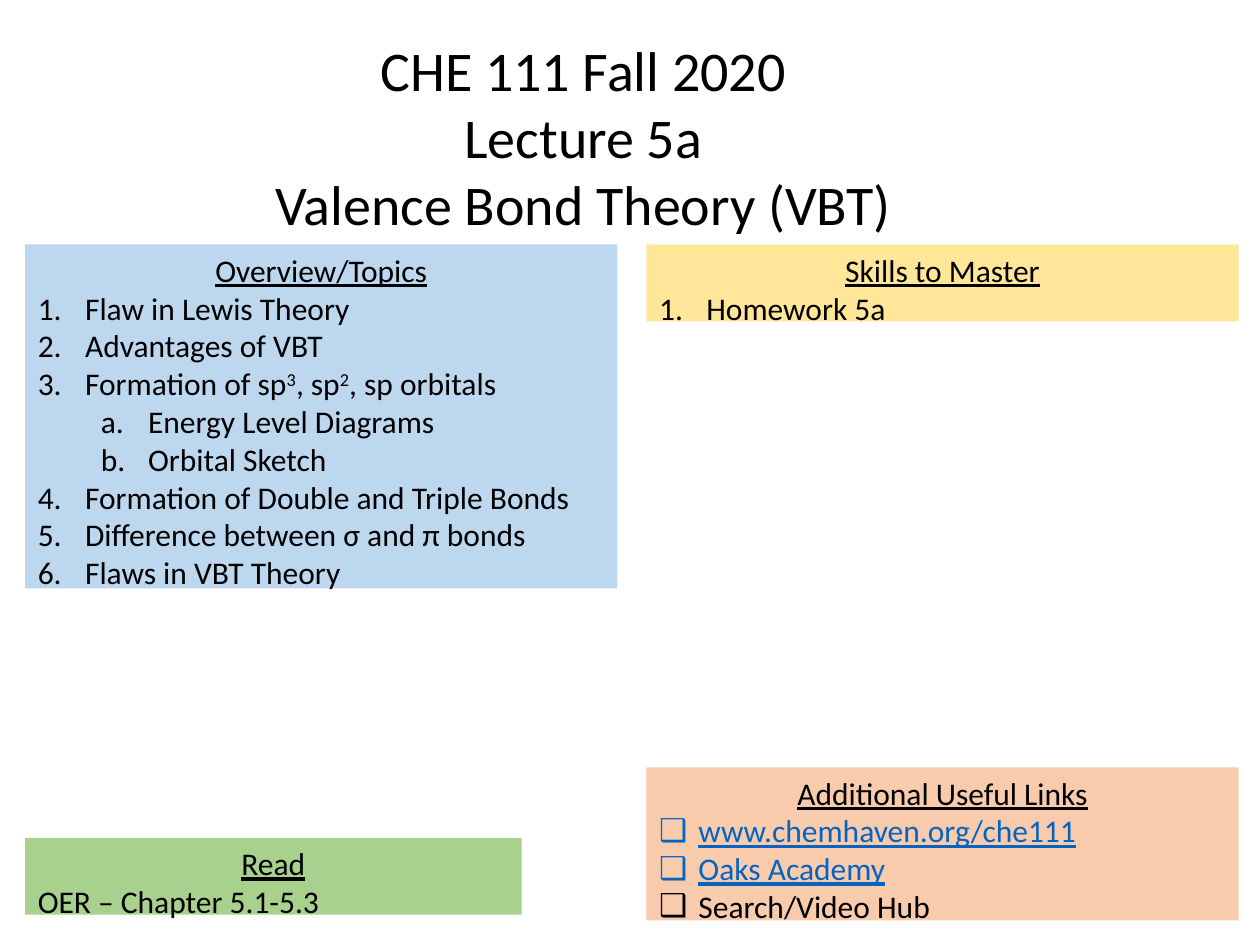
from dataclasses import dataclass

from lxml import etree
from pptx import Presentation
from pptx.dml.color import RGBColor
from pptx.enum import text as t
from pptx.oxml import ns
from pptx.util import Pt

BLACK = RGBColor(0x00, 0x00, 0x00)
LINK_BLUE = RGBColor(0x05, 0x63, 0xC1)
BLUE = RGBColor(0xBD, 0xD7, 0xEE)
YELLOW = RGBColor(0xFF, 0xE6, 0x99)
GREEN = RGBColor(0xA9, 0xD1, 0x8E)
ORANGE = RGBColor(0xF8, 0xCB, 0xAD)

LEFT_COLUMN, RIGHT_COLUMN = 14.4, 369.4
COLUMN_WIDTH = 338.4
PANEL_TOP = 139.7
LINE_HEIGHT, PANEL_PADDING = 21.8, 7.4
LEVEL_INDENT = 36

NUMBER = ("buAutoNum", {"type": "arabicPeriod"}, 27)
LETTER = ("buAutoNum", {"type": "alphaLcPeriod"}, 27)
CHECKBOX = ("buChar", {"char": "❑"}, 22.5)
PLAIN = ("buNone", {}, 0)


@dataclass
class Item:
    """A line of text; parts between ^ marks are superscript."""
    words: str
    bullet: tuple = NUMBER
    level: int = 0
    link: bool = False


@dataclass
class Panel:
    placeholder: int
    left: float
    top: float
    width: float
    fill: RGBColor
    heading: str
    items: list[Item]


PANELS = [
    Panel(1, LEFT_COLUMN, PANEL_TOP, COLUMN_WIDTH, BLUE, "Overview/Topics", [
        Item("Flaw in Lewis Theory"),
        Item("Advantages of VBT"),
        Item("Formation of sp^3^, sp^2^, sp orbitals"),
        Item("Energy Level Diagrams", LETTER, 1),
        Item("Orbital Sketch", LETTER, 1),
        Item("Formation of Double and Triple Bonds"),
        Item("Difference between σ and π bonds"),
        Item("Flaws in VBT Theory"),
    ]),
    Panel(2, RIGHT_COLUMN, PANEL_TOP, COLUMN_WIDTH, YELLOW, "Skills to Master", [
        Item("Homework 5a"),
    ]),
    Panel(3, LEFT_COLUMN, 478.8, 283.7, GREEN, "Read", [
        Item("OER – Chapter 5.1-5.3", PLAIN),
    ]),
    Panel(4, RIGHT_COLUMN, 438.5, COLUMN_WIDTH, ORANGE, "Additional Useful Links", [
        Item("www.chemhaven.org/che111", CHECKBOX, link=True),
        Item("Oaks Academy", CHECKBOX, link=True),
        Item("Search/Video Hub", CHECKBOX),
    ]),
]
TITLE_LINES = ["CHE 111 Fall 2020", "Lecture 5a", "Valence Bond Theory (VBT)"]


def place(holder, left: float, top: float, width: float, height: float, wrap: bool):
    bounds = {"left": left, "top": top, "width": width, "height": height}
    for side, points in bounds.items():
        setattr(holder, side, Pt(points))
    frame = holder.text_frame
    layout = {
        "word_wrap": wrap,
        "auto_size": t.MSO_AUTO_SIZE.SHAPE_TO_FIT_TEXT,
        "vertical_anchor": t.MSO_ANCHOR.TOP,
    }
    for name, value in layout.items():
        setattr(frame, name, value)
    return frame


def write_line(frame, first: bool, item: Item, size: float,
               align=t.PP_ALIGN.LEFT, underline: bool = False) -> None:
    paragraph = frame.paragraphs[0] if first else frame.add_paragraph()
    tag, attributes, hanging = item.bullet
    properties = paragraph._p.get_or_add_pPr()
    properties.set("marL", str(Pt(item.level * LEVEL_INDENT + hanging)))
    properties.set("indent", str(Pt(-hanging)))
    etree.SubElement(properties, ns.qn(f"a:{tag}"), attributes)
    spacing = {"level": item.level, "alignment": align, "space_before": Pt(0)}
    for name, value in spacing.items():
        setattr(paragraph, name, value)

    style = {"name": "Calibri", "size": Pt(size), "bold": False,
             "underline": underline or item.link}
    for position, words in enumerate(item.words.split("^")):
        run = paragraph.add_run()
        run.text = words
        for name, value in style.items():
            setattr(run.font, name, value)
        run.font.color.rgb = LINK_BLUE if item.link else BLACK
        if position % 2:
            run._r.get_or_add_rPr().set("baseline", "30000")


def draw_panel(slide, panel: Panel) -> None:
    holder = slide.placeholders[panel.placeholder]
    height = PANEL_PADDING + LINE_HEIGHT * (len(panel.items) + 1)
    frame = place(holder, panel.left, panel.top, panel.width, height, True)
    holder.fill.solid()
    holder.fill.fore_color.rgb = panel.fill
    write_line(frame, True, Item(panel.heading, PLAIN), 18, t.PP_ALIGN.CENTER, True)
    for item in panel.items:
        write_line(frame, False, item, 18)


def main() -> None:
    deck = Presentation()
    deck.slide_width, deck.slide_height = Pt(720), Pt(540)
    comparison_layout = deck.slide_layouts[4]
    slide = deck.slides.add_slide(comparison_layout)
    for panel in PANELS:
        draw_panel(slide, panel)
    title = place(slide.shapes.title, 148.3, 16.6, 370, 123.8, False)
    for position, words in enumerate(TITLE_LINES):
        write_line(title, position == 0, Item(words, PLAIN), 32, t.PP_ALIGN.CENTER)
    deck.save("out.pptx")


if __name__ == "__main__":
    main()
